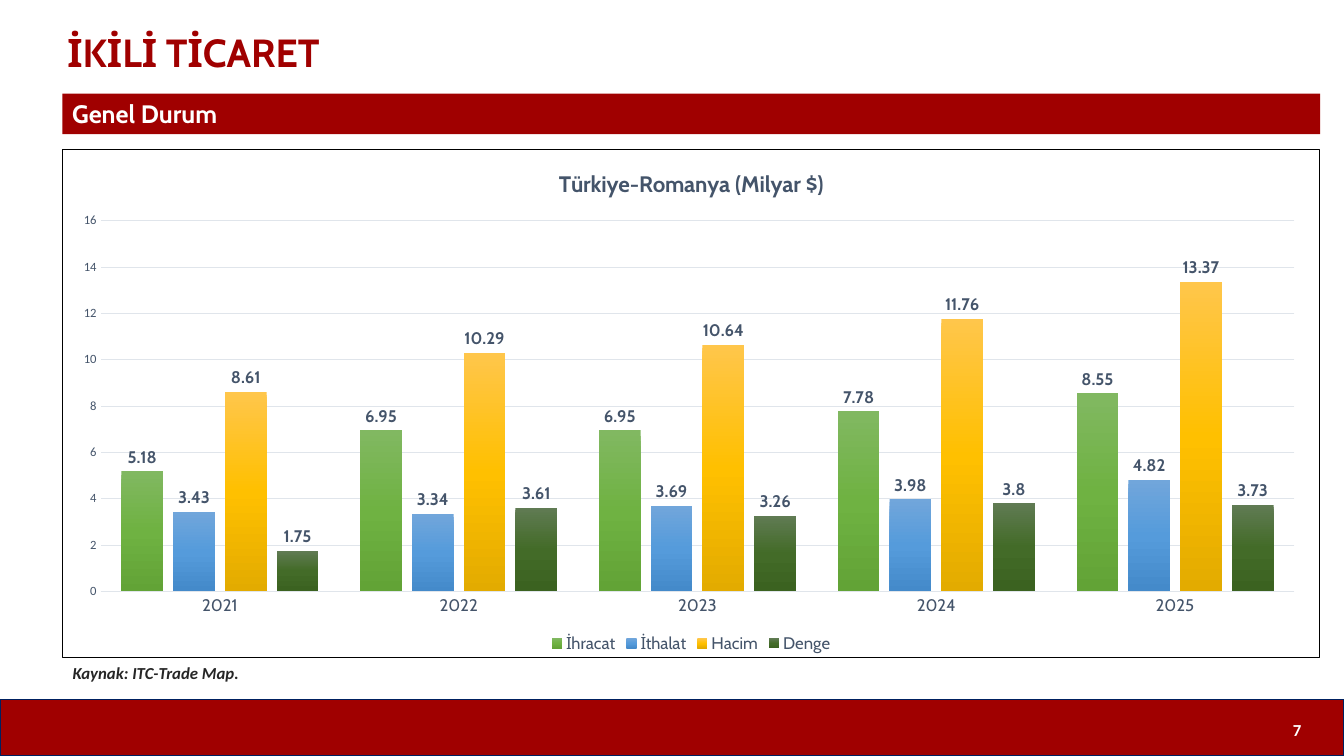
from lxml.etree import SubElement
from pptx import Presentation
from pptx.chart.data import CategoryChartData
from pptx.dml.color import RGBColor
from pptx.enum.chart import XL_CHART_TYPE as ChartType
from pptx.enum.chart import XL_LABEL_POSITION as LabelPosition
from pptx.enum.chart import XL_LEGEND_POSITION as LegendPosition
from pptx.enum.chart import XL_TICK_MARK as TickMark
from pptx.enum.shapes import MSO_SHAPE as Shape
from pptx.enum.text import MSO_ANCHOR as Anchor
from pptx.enum.text import MSO_AUTO_SIZE as AutoSize
from pptx.enum.text import PP_ALIGN as Align
from pptx.oxml import parse_xml
from pptx.oxml.ns import nsdecls, qn
from pptx.util import Cm, Pt

HEADING = "İKİLİ TİCARET"
SUBHEADING = "Genel Durum"
SOURCE_NOTE = "Kaynak: ITC-Trade Map."
PAGE_NUMBER = "7"
CHART_TITLE = "Türkiye-Romanya (Milyar $)"
YEARS = ["2021", "2022", "2023", "2024", "2025"]
FLOWS = {
    "İhracat": ([5.18, 6.95, 6.95, 7.78, 8.55], ["81B861", "6FB242", "62A336"]),
    "İthalat": ([3.43, 3.34, 3.69, 3.98, 4.82], ["71A6DB", "559BDB", "448ACA"]),
    "Hacim": ([8.61, 10.29, 10.64, 11.76, 13.37], ["FFC64B", "FFC000", "E3AB00"]),
    "Denge": ([1.75, 3.61, 3.26, 3.8, 3.73], ["607B53", "436B28", "3B6220"]),
}
PLOT_AREA = {"x": 0.03, "y": 0.14, "w": 0.95, "h": 0.73}
RED, WHITE, SLATE, GRID = "A00000", "FFFFFF", "44546A", "E0E5EB"
SLIDE_W, SLIDE_H = 33.87, 19.05
LEFT, CONTENT_W = 1.57, 31.7
FOOTER_TOP = 17.62


def rgb(code):
    return RGBColor.from_string(code)


def style(font, size, color, name="Cabin", bold=False, italic=False):
    font.size, font.name = Pt(size), name
    font.bold, font.italic = bold, italic
    font.color.rgb = rgb(color)


def write(frame, text, size, color, align=Align.LEFT, **look):
    paragraph = frame.paragraphs[0]
    paragraph.alignment = align
    run = paragraph.add_run()
    run.text = text
    style(run.font, size, color, bold=True, **look)
    return paragraph


def insets(frame, left, top, right, bottom):
    frame.margin_left, frame.margin_top = Cm(left), Cm(top)
    frame.margin_right, frame.margin_bottom = Cm(right), Cm(bottom)


def add_block(kind, left, top, width, height, fill=None, line=None):
    block = slide.shapes.add_shape(kind, Cm(left), Cm(top), Cm(width), Cm(height))
    block.shadow.inherit = False
    if fill:
        block.fill.solid()
        block.fill.fore_color.rgb = rgb(fill)
    else:
        block.fill.background()
    if line:
        block.line.color.rgb = rgb(line)
        block.line.width = Pt(1)
    else:
        block.line.fill.background()
    return block


def gradient(colors):
    step = 100000 // (len(colors) - 1)
    stops = "".join(
        f'<a:gs pos="{i * step}"><a:srgbClr val="{color}"/></a:gs>'
        for i, color in enumerate(colors)
    )
    return parse_xml(
        f'<a:gradFill {nsdecls("a")} rotWithShape="1"><a:gsLst>{stops}</a:gsLst>'
        '<a:lin ang="5400000" scaled="0"/></a:gradFill>'
    )


def place_plot(chart):
    plot_area = chart._chartSpace.chart.plotArea
    for old in plot_area.findall(qn("c:layout")):
        plot_area.remove(old)
    layout = parse_xml(f'<c:layout {nsdecls("c")}/>')
    manual = SubElement(layout, qn("c:manualLayout"))
    SubElement(manual, qn("c:layoutTarget")).set("val", "inner")
    for axis in "xy":
        SubElement(manual, qn(f"c:{axis}Mode")).set("val", "edge")
    for key, share in PLOT_AREA.items():
        SubElement(manual, qn(f"c:{key}")).set("val", str(share))
    plot_area.insert(0, layout)


def frame_chart(chart):
    border = parse_xml(
        f'<c:spPr {nsdecls("c", "a")}><a:solidFill><a:srgbClr val="{WHITE}"/></a:solidFill>'
        '<a:ln w="9525"><a:solidFill><a:srgbClr val="000000"/></a:solidFill></a:ln></c:spPr>'
    )
    chart._chartSpace.find(qn("c:txPr")).addprevious(border)


def add_trade_chart():
    trade = CategoryChartData()
    trade.categories = YEARS
    for name, (values, _) in FLOWS.items():
        trade.add_series(name, values)
    chart = slide.shapes.add_chart(
        ChartType.COLUMN_CLUSTERED, Cm(LEFT), Cm(3.76), Cm(CONTENT_W), Cm(12.82), trade
    ).chart
    style(chart.font, 10, "000000", name="Calibri")
    chart.has_title = True
    write(chart.chart_title.text_frame, CHART_TITLE, 16, SLATE, align=Align.CENTER)
    chart.has_legend = True
    chart.legend.position = LegendPosition.BOTTOM
    chart.legend.include_in_layout = False
    style(chart.legend.font, 12, SLATE)

    years, amounts = chart.category_axis, chart.value_axis
    for axis in (years, amounts):
        axis.major_tick_mark = axis.minor_tick_mark = TickMark.NONE
    style(years.tick_labels.font, 12, SLATE)
    style(amounts.tick_labels.font, 9, SLATE, name="Calibri")
    amounts.minimum_scale, amounts.maximum_scale, amounts.major_unit = 0, 16, 2
    amounts.format.line.fill.background()
    for line in (years.format.line, amounts.major_gridlines.format.line):
        line.color.rgb = rgb(GRID)
        line.width = Pt(0.75)

    plot = chart.plots[0]
    plot.gap_width, plot.overlap, plot.vary_by_categories = 100, -24, False
    for flow in plot.series:
        flow.invert_if_negative = False
        flow.format.fill.gradient()
        fill = flow._element.find(qn("c:spPr")).find(qn("a:gradFill"))
        fill.getparent().replace(fill, gradient(FLOWS[flow.name][1]))
        labels = flow.data_labels
        labels.show_value = True
        labels.position = LabelPosition.OUTSIDE_END
        style(labels.font, 12, SLATE, bold=True)
    place_plot(chart)
    frame_chart(chart)


deck = Presentation()
deck.slide_width, deck.slide_height = Cm(SLIDE_W), Cm(SLIDE_H)
slide = deck.slides.add_slide(deck.slide_layouts[5])

add_block(Shape.RECTANGLE, 0, FOOTER_TOP, SLIDE_W, SLIDE_H - FOOTER_TOP, RED, "002060")
page = add_block(Shape.ROUND_2_SAME_RECTANGLE, 32.08, FOOTER_TOP, 1.22, 1.5).text_frame
page.vertical_anchor = Anchor.MIDDLE
insets(page, 0, 0, 0, 0)
write(page, PAGE_NUMBER, 12, WHITE, align=Align.CENTER, name="Calibri")

title = slide.shapes.title
title.left, title.top, title.width, title.height = Cm(LEFT), Cm(0), Cm(20.07), Cm(2.74)
heading = title.text_frame
heading.auto_size, heading.vertical_anchor = AutoSize.NONE, Anchor.MIDDLE
insets(heading, 0.13, 0.13, 0.13, 0.13)
write(heading, HEADING, 28, RED).line_spacing = 0.9

band = add_block(Shape.RECTANGLE, LEFT, 2.36, CONTENT_W, 1.02, RED).text_frame
band.vertical_anchor = Anchor.MIDDLE
write(band, SUBHEADING, 18, WHITE, align=Align.JUSTIFY)

note = slide.shapes.add_textbox(Cm(1.83), Cm(16.59), Cm(9.75), Cm(0.91)).text_frame
note.word_wrap = True
insets(note, 0, 0.1, 0, 0)
write(note, SOURCE_NOTE, 12, "262626", name="Calibri", italic=True)

add_trade_chart()
deck.save("out.pptx")
